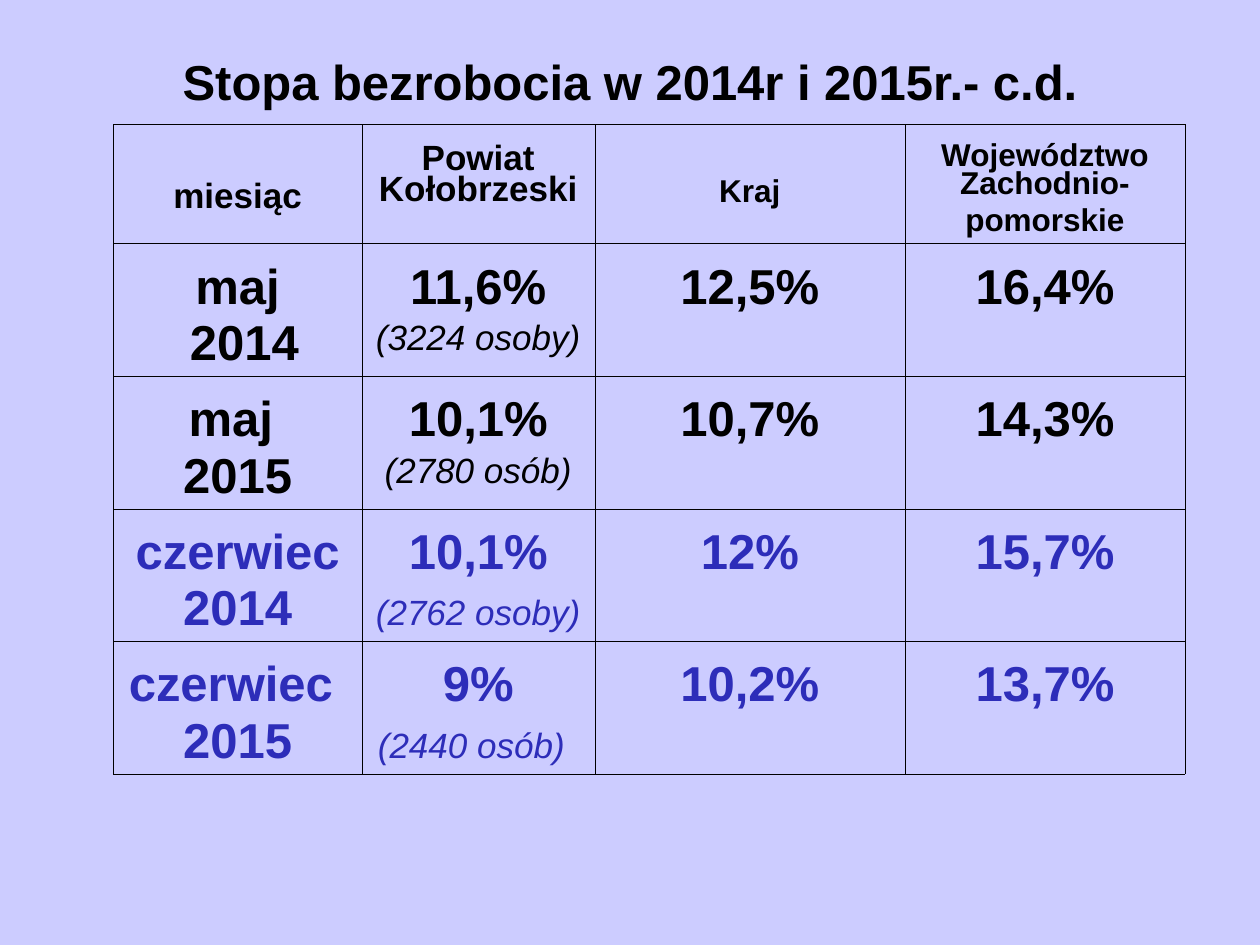
from dataclasses import dataclass

import lxml.etree
import pptx
import pptx.dml.color
import pptx.enum.text
import pptx.oxml.ns
import pptx.util

Cm = pptx.util.Cm
Pt = pptx.util.Pt
RGBColor = pptx.dml.color.RGBColor

LAVENDER = RGBColor(0xCC, 0xCC, 0xFF)
BLACK = RGBColor(0, 0, 0)
BLUE = RGBColor(0x2D, 0x2D, 0xB9)

FONT = "Arial"
LINE_SPACING = 0.81
INNER_LINE, OUTER_LINE = Pt(0.11), Pt(0.23)
COLUMN_WIDTHS = [Cm(5), Cm(4.7), Cm(6.25), Cm(5.65)]
HEADER_HEIGHT, MONTH_HEIGHT = Cm(2.4), Cm(2.67)


@dataclass
class Words:
    text: str
    size: float = 28
    bold: bool = True
    italic: bool = False


@dataclass
class Entry:
    paragraphs: list[list[Words]]
    top: float = 0.51  # inner top margin, cm
    space_before: float = 7
    color: RGBColor = BLACK


@dataclass
class Month:
    name: str
    year: str
    county: str
    people: list[Words]
    country: str
    region: str
    color: RGBColor = BLACK


def people(text: str) -> Words:
    return Words(text, 20, bold=False, italic=True)


HEADERS = [
    Entry([[Words("miesiąc", 20)]], 1.18, 4.5),
    Entry([[Words("Powiat Kołobrzeski", 20)]], 0.41, 5),
    Entry([[Words("Kraj", 18)]], 1.12, 4.5),
    Entry([[Words("Województwo Zachodnio-", 18)], [Words("pomorskie", 18)]], 0.38, 4.5),
]

MONTHS = [
    Month("maj", " 2014", "11,6%", [people("(3224 osoby)")], "12,5%", "16,4%"),
    Month("maj ", "2015", "10,1%", [people("(2780 osób)")], "10,7%", "14,3%"),
    Month("czerwiec", "2014", "10,1%", [people("(2762 osoby)"), Words(" ")],
          "12%", "15,7%", BLUE),
    Month("czerwiec ", "2015", "9%", [people("(2440 osób)"), Words(" ", bold=False)],
          "10,2%", "13,7%", BLUE),
]


def month_entries(month: Month) -> list[Entry]:
    cells = [
        [[Words(month.name)], [Words(month.year)]],
        [[Words(month.county)], month.people],
        [[Words(month.country)]],
        [[Words(month.region)]],
    ]
    return [Entry(paragraphs, color=month.color) for paragraphs in cells]


def add_words(paragraph, words: Words, color: RGBColor) -> None:
    run = paragraph.add_run()
    run.text = words.text
    run.font.name = FONT
    run.font.size = Pt(words.size)
    run.font.bold = words.bold
    run.font.italic = words.italic
    run.font.color.rgb = color


def set_border(cell, side: str, width: int) -> None:
    qn = pptx.oxml.ns.qn
    line = lxml.etree.SubElement(cell._tc.get_or_add_tcPr(), qn(f"a:ln{side}"), w=str(int(width)))
    fill = lxml.etree.SubElement(line, qn("a:solidFill"))
    lxml.etree.SubElement(fill, qn("a:srgbClr"), val=str(BLACK))


def fill_cell(cell, entry: Entry, outer_sides: dict[str, bool]) -> None:
    for side, is_outer in outer_sides.items():
        set_border(cell, side, OUTER_LINE if is_outer else INNER_LINE)
    cell.fill.background()
    cell.margin_left = cell.margin_right = Cm(0.25)
    cell.margin_top = Cm(entry.top)
    cell.margin_bottom = Cm(0.13)
    frame = cell.text_frame
    for index, line in enumerate(entry.paragraphs):
        paragraph = frame.add_paragraph() if index else frame.paragraphs[0]
        paragraph.alignment = pptx.enum.text.PP_ALIGN.CENTER
        paragraph.line_spacing = LINE_SPACING
        paragraph.space_before = Pt(entry.space_before)
        for words in line:
            add_words(paragraph, words, entry.color)


def add_title(slide, text: str) -> None:
    title = slide.shapes.title
    title.left, title.top, title.width, title.height = Cm(1.27), Cm(0.76), Cm(22.86), Cm(1.75)
    frame = title.text_frame
    frame.auto_size = pptx.enum.text.MSO_AUTO_SIZE.NONE
    frame.vertical_anchor = pptx.enum.text.MSO_ANCHOR.MIDDLE
    frame.paragraphs[0].alignment = pptx.enum.text.PP_ALIGN.CENTER
    add_words(frame.paragraphs[0], Words(text), BLACK)


def add_rate_table(slide, rows: list[list[Entry]]) -> None:
    heights = [HEADER_HEIGHT] + [MONTH_HEIGHT] * (len(rows) - 1)
    table = slide.shapes.add_table(
        len(rows), len(COLUMN_WIDTHS), Cm(2.29), Cm(2.51), sum(COLUMN_WIDTHS), sum(heights)
    ).table
    table.first_row = table.horz_banding = False
    for column, width in zip(table.columns, COLUMN_WIDTHS):
        column.width = width
    for r, (entries, height) in enumerate(zip(rows, heights)):
        table.rows[r].height = height
        for c, entry in enumerate(entries):
            outer_sides = {"L": c == 0, "R": c == len(entries) - 1,
                           "T": r == 0, "B": r == len(rows) - 1}
            fill_cell(table.cell(r, c), entry, outer_sides)


def main() -> None:
    presentation = pptx.Presentation()
    presentation.slide_width, presentation.slide_height = Cm(25.4), Cm(19.05)
    slide = presentation.slides.add_slide(presentation.slide_layouts[5])

    # Background
    slide.background.fill.solid()
    slide.background.fill.fore_color.rgb = LAVENDER

    # Title and unemployment rates
    add_title(slide, "Stopa bezrobocia w 2014r i 2015r.- c.d.")
    add_rate_table(slide, [HEADERS] + [month_entries(month) for month in MONTHS])

    presentation.save("out.pptx")


if __name__ == "__main__":
    main()
